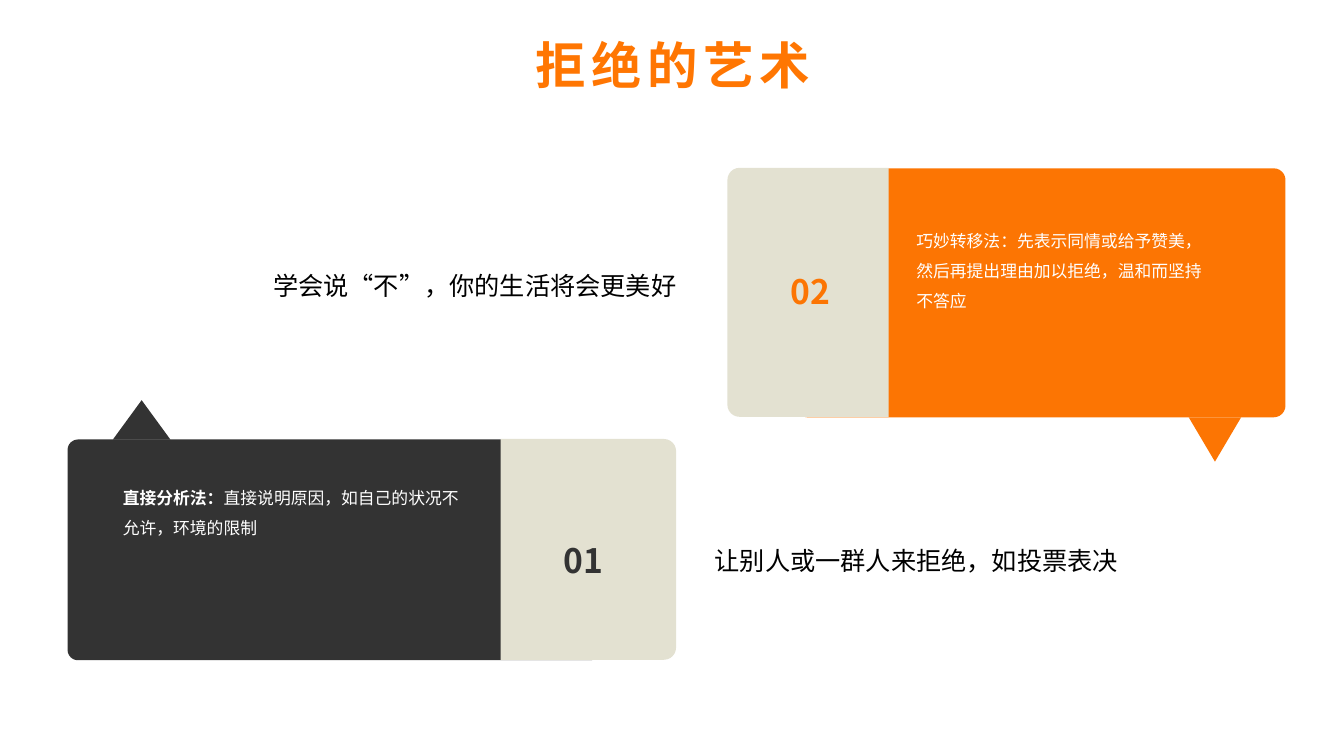
from pptx import Presentation
from pptx.dml.color import RGBColor
from pptx.enum.shapes import MSO_SHAPE
from pptx.enum.text import PP_ALIGN
from pptx.oxml.ns import qn
from pptx.util import Pt
from lxml import etree

ROUND = MSO_SHAPE.ROUNDED_RECTANGLE
TAB = MSO_SHAPE.ROUND_2_SAME_RECTANGLE
TIP = MSO_SHAPE.ISOSCELES_TRIANGLE
LEFT, MID = PP_ALIGN.LEFT, PP_ALIGN.CENTER

THEME = {
    "font": "Noto Sans CJK SC",
    "title": "FF7602", "black": "000000", "white": "FFFFFF",
    "dark": "333333", "orange": "FC7503", "sand": "E3E1D1",
    "head": 36, "num": 24, "lead": 18, "body": 12,
}
SCALE = 9144
SIZE = (1333, 750)

TITLE = ("拒绝的艺术", (241, 29, 852, 71))
LEADS = [
    ("学会说“不”，你的生活将会更美好", (261, 248, 457, 56)),
    ("让别人或一群人来拒绝，如投票表决", (699, 521, 569, 50)),
]
CARDS = [
    {"fill": "dark", "box": (67, 436, 529, 219),
     "tab": (497, 436, 174, 219), "turn": 90,
     "tip": (112, 397, 57, 39), "spin": 0,
     "num": ("01", (549, 511, 69, 71), LEFT),
     "text": ("直接分析法：", "直接说明原因，如自己的状况不允许，环境的限制"),
     "area": (112, 469, 357, 152)},
    {"fill": "orange", "box": (789, 167, 486, 247),
     "tab": (722, 167, 160, 247), "turn": 270,
     "tip": (1179, 414, 52, 44), "spin": 180,
     "num": ("02", (749, 244, 109, 64), MID),
     "text": ("", "巧妙转移法：先表示同情或给予赞美，然后再提出理由加以拒绝，温和而坚持不答应"),
     "area": (899, 214, 315, 197)},
]
ROUNDING = 0.047
CORNER = 12


def emu(box):
    return [n * SCALE for n in box]


def tint(name):
    return RGBColor.from_string(THEME[name])


def draw(kind, box, fill, turn=0):
    shape = slide.shapes.add_shape(kind, *emu(box))
    shape.shadow.inherit = False
    shape.fill.solid()
    shape.fill.fore_color.rgb = tint(fill)
    shape.line.fill.background()
    shape.rotation = turn
    return shape


def write(parts, box, size, color, align=LEFT, space=1.5, track=0):
    frame = slide.shapes.add_textbox(*emu(box)).text_frame
    frame.word_wrap = True
    para = frame.paragraphs[0]
    para.alignment = align
    para.line_spacing = space
    for text, bold in parts:
        run = para.add_run()
        run.text = text
        font = run.font
        font.name = THEME["font"]
        font.size = Pt(THEME[size])
        font.bold = bold
        font.color.rgb = tint(color)
        props = run._r.get_or_add_rPr()
        etree.SubElement(props, qn("a:ea")).set("typeface", THEME["font"])
        if track:
            props.set("spc", str(track * 100))


def card(data):
    fill = data["fill"]
    draw(ROUND, data["box"], fill).adjustments[0] = ROUNDING
    x, y, w, h = data["tab"]
    side = (x + (w - h) / 2, y + (h - w) / 2, h, w)
    tab = draw(TAB, [round(n) for n in side], "sand", data["turn"])
    tab.adjustments[0] = CORNER / w
    draw(TIP, data["tip"], fill, data["spin"])
    lead, rest = data["text"]
    parts = [(t, b) for t, b in ((lead, True), (rest, False)) if t]
    write(parts, data["area"], "body", "white")
    num, box, align = data["num"]
    write([(num, True)], box, "num", fill, align)


deck = Presentation()
deck.slide_width, deck.slide_height = emu(SIZE)
slide = deck.slides.add_slide(deck.slide_layouts[6])

text, box = TITLE
write([(text, True)], box, "head", "title", MID, 1, 4)
for text, box in LEADS:
    write([(text, False)], box, "lead", "black")
for data in CARDS:
    card(data)

deck.save("out.pptx")
